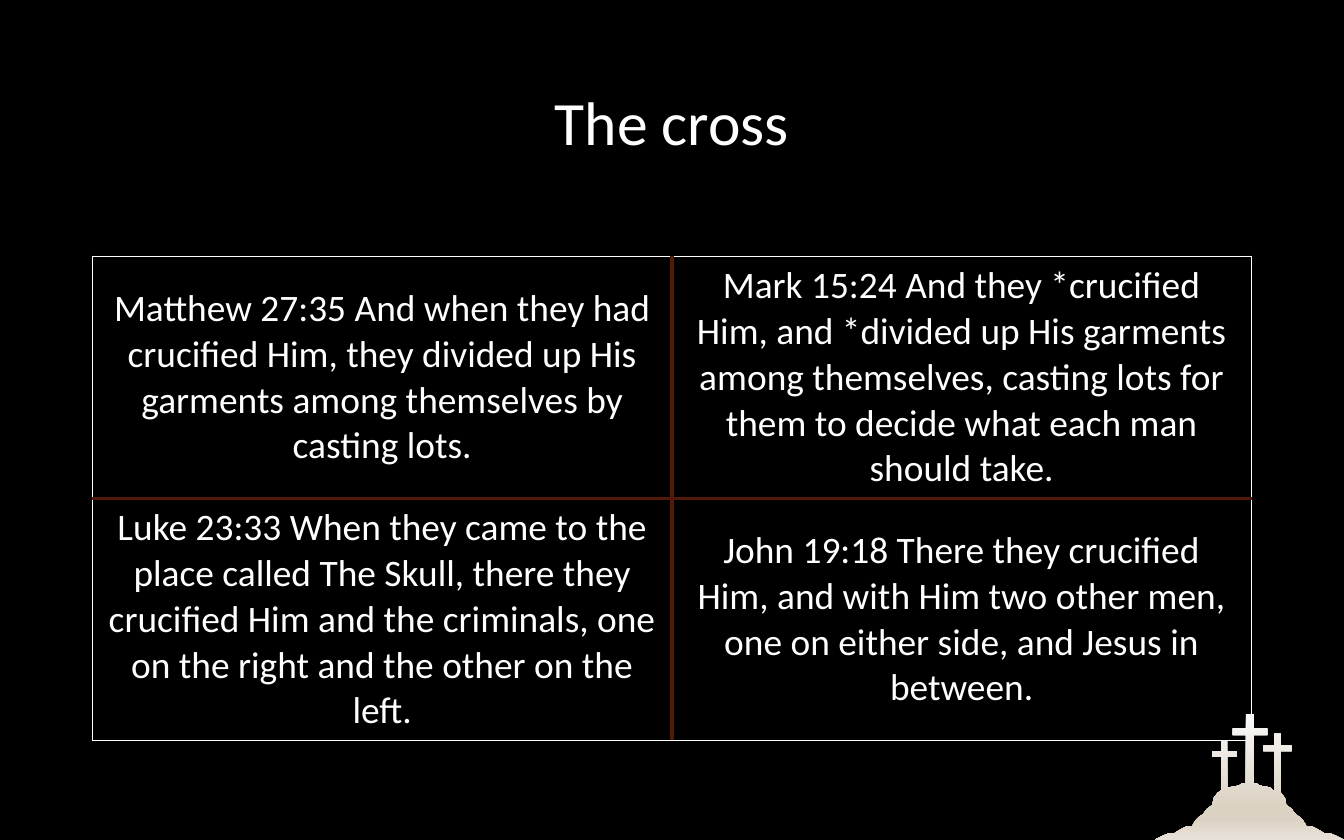
from dataclasses import dataclass

from lxml.etree import SubElement
from pptx import Presentation
from pptx.dml.color import RGBColor
from pptx.enum.text import MSO_ANCHOR, PP_ALIGN
from pptx.oxml.ns import qn
from pptx.util import Cm, Pt

BLACK, WHITE, BROWN = "000000", "FFFFFF", "521808"
FONT = "Calibri"
LEFT, WIDTH = Cm(1.75), Cm(21.9)
UNIT = Cm(2.54) / 100  # drawing grid of the hill
SPAN = 141  # hill width in grid units

VERSES = [
    ["Matthew 27:35 And when they had crucified Him, they divided up His "
     "garments among themselves by casting lots.",
     "Mark 15:24 And they *crucified Him, and *divided up His garments among "
     "themselves, casting lots for them to decide what each man should take."],
    ["Luke 23:33 When they came to the place called The Skull, there they "
     "crucified Him and the criminals, one on the right and the other on the left.",
     "John 19:18 There they crucified Him, and with Him two other men, "
     "one on either side, and Jesus in between."],
]


@dataclass
class Edge:
    color: str
    width: float


@dataclass
class Cross:
    stem: tuple[int, int]
    beam: tuple[int, int]
    top: int
    arm: tuple[int, int]
    foot: int


OUTER, INNER = Edge(WHITE, 1), Edge(BROWN, 2.25)
CROSSES = [
    Cross((50, 54), (43, 61), 20, (28, 32), 57),
    Cross((68, 74), (58, 84), 0, (11, 16), 52),
    Cross((89, 94), (81, 102), 15, (24, 28), 58),
]
SLOPE = [(0, 94), (6, 91), (11, 89), (15, 89), (18, 87), (20, 86), (24, 84),
         (28, 84), (29, 82), (31, 79), (33, 77), (36, 75), (39, 71), (43, 68),
         (44, 63), (47, 59)]
RIDGE = [(55, 55), (61, 54), (64, 53), (65, 52)]
STOPS = [(0, "FBFAF9"), (74, "DCD2C4"), (83, "DCD2C4"), (100, "E8E1D8")]


def rgb(code: str) -> RGBColor:
    return RGBColor.from_string(code)


def style(frame, text: str, size: float) -> None:
    frame.text = text
    para = frame.paragraphs[0]
    para.alignment = PP_ALIGN.CENTER
    font = para.runs[0].font
    font.name, font.size, font.color.rgb = FONT, Pt(size), rgb(WHITE)


def border(cell, edges: dict[str, Edge]) -> None:
    props = cell._tc.get_or_add_tcPr()
    for spot, (side, edge) in enumerate(edges.items()):
        line = SubElement(props, qn(f"a:ln{side}"), w=str(Pt(edge.width)))
        fill = SubElement(line, qn("a:solidFill"))
        SubElement(fill, qn("a:srgbClr"), val=edge.color)
        props.insert(spot, line)  # borders come before the fill


def grid(slide) -> None:
    rows, cols = len(VERSES), len(VERSES[0])
    table = slide.shapes.add_table(rows, cols, LEFT, Cm(4.85), WIDTH, Cm(9.1)).table
    table.first_row = table.horz_banding = False
    for r, row in enumerate(VERSES):
        for c, verse in enumerate(row):
            cell = table.cell(r, c)
            style(cell.text_frame, verse, 20)
            cell.vertical_anchor = MSO_ANCHOR.MIDDLE
            cell.fill.solid()
            cell.fill.fore_color.rgb = rgb(BLACK)
            border(cell, {
                "L": INNER if c else OUTER,
                "R": INNER if c < cols - 1 else OUTER,
                "T": INNER if r else OUTER,
                "B": INNER if r < rows - 1 else OUTER,
            })


def outline(cross: Cross) -> list[tuple[int, int]]:
    (a, b), (l, r), (hi, lo) = cross.stem, cross.beam, cross.arm
    return [(a, cross.foot), (a, lo), (l, lo), (l, hi), (a, hi), (a, cross.top),
            (b, cross.top), (b, hi), (r, hi), (r, lo), (b, lo), (b, cross.foot)]


def mirror(points: list[tuple[int, int]]) -> list[tuple[int, int]]:
    return [(SPAN - x, y) for x, y in reversed(points)]


def hill(slide) -> None:
    west, mid, east = map(outline, CROSSES)
    points = SLOPE + west + RIDGE + mid + mirror(RIDGE) + east + mirror(SLOPE)
    pen = slide.shapes.build_freeform(*points[0], scale=UNIT)
    pen.add_line_segments(points[1:], close=True)
    shape = pen.convert_to_shape(Cm(21.82), Cm(13.49))
    shape.shadow.inherit = False
    shape.line.fill.background()
    # Four-stop gradient running downwards
    shape.fill.gradient()
    grad = shape._element.spPr.find(qn("a:gradFill"))
    stops = grad.find(qn("a:gsLst"))
    for old in list(stops):
        stops.remove(old)
    for pos, code in STOPS:
        stop = SubElement(stops, qn("a:gs"), pos=str(pos * 1000))
        SubElement(stop, qn("a:srgbClr"), val=code)
    shape.fill.gradient_angle = 270


def main() -> None:
    deck = Presentation()
    deck.slide_width, deck.slide_height = Cm(25.4), Cm(15.88)
    slide = deck.slides.add_slide(deck.slide_layouts[5])
    back = slide.background.fill
    back.solid()
    back.fore_color.rgb = rgb(BLACK)

    # Title
    title = slide.shapes.title
    title.left, title.top, title.width, title.height = LEFT, Cm(0.84), WIDTH, Cm(3.07)
    style(title.text_frame, "The cross", 33)
    title.text_frame.vertical_anchor = MSO_ANCHOR.MIDDLE
    title.text_frame.paragraphs[0].line_spacing = 0.9

    # Verses, then the hill with its crosses
    grid(slide)
    hill(slide)
    deck.save("out.pptx")


if __name__ == "__main__":
    main()
